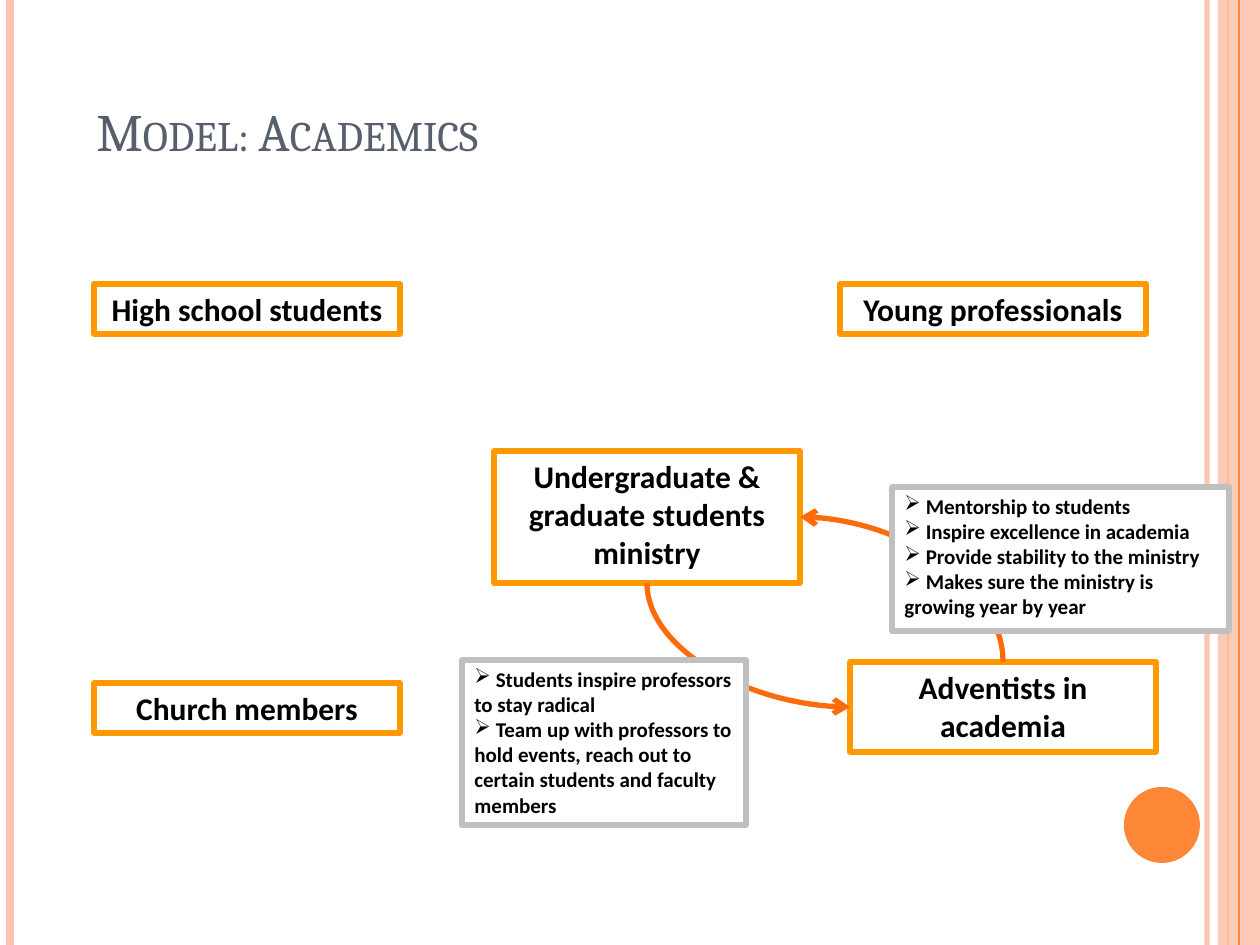
from pptx import Presentation
from pptx.dml.color import RGBColor
from pptx.enum.shapes import MSO_CONNECTOR, MSO_SHAPE
from pptx.enum.text import MSO_ANCHOR, MSO_AUTO_SIZE, PP_ALIGN
from pptx.oxml.ns import qn
from pptx.oxml.xmlchemy import OxmlElement
from pptx.util import Emu, Pt

PX_PER_INCH = 126
WIDTH, HEIGHT = 1260, 945
WHITE = RGBColor(0xFF, 0xFF, 0xFF)
BLACK = RGBColor(0x00, 0x00, 0x00)
SLATE = RGBColor(0x57, 0x5F, 0x6D)
PEACH = RGBColor(0xFE, 0xC3, 0xAE)
ORANGE = RGBColor(0xFE, 0x86, 0x37)
AMBER = RGBColor(0xFF, 0x99, 0x00)
ARROW = RGBColor(0xFF, 0x6B, 0x0A)
SILVER = RGBColor(0xC0, 0xC0, 0xC0)


def px(length):
    return Emu(round(length * 914400 / PX_PER_INCH))


def add_child(parent, tag, **attributes):
    child = OxmlElement(tag)
    for key, value in attributes.items():
        child.set(key, str(value))
    parent.append(child)


def set_opacity(properties, percent):
    """Make the solid colour inside a shape's or a line's XML translucent."""
    colour = properties.find(qn("a:solidFill")).find(qn("a:srgbClr"))
    add_child(colour, "a:alpha", val=percent * 1000)


class Slide:
    HEADING_FONT, BODY_FONT = "Cambria", "Calibri"

    def __init__(self, slide):
        self.shapes = slide.shapes

    def text_run(self, paragraph, text, size, font, colour, bold=False):
        run = paragraph.add_run()
        run.text = text
        run.font.size = Pt(size)
        run.font.name = font
        run.font.color.rgb = colour
        run.font.bold = bold
        return run

    def title(self, box, text):
        frame = self.shapes.add_textbox(*map(px, box)).text_frame
        frame.word_wrap = True
        frame.vertical_anchor = MSO_ANCHOR.BOTTOM
        run = self.text_run(frame.paragraphs[0], text, 30, self.HEADING_FONT, SLATE)
        run.font._element.set("cap", "small")

    def shape(self, kind, box, fill=None, line=None, opacity=100):
        shape = self.shapes.add_shape(kind, *map(px, box))
        shape.shadow.inherit = False
        if fill is None:
            shape.fill.background()
        else:
            shape.fill.solid()
            shape.fill.fore_color.rgb = fill
            if opacity < 100:
                set_opacity(shape._element.spPr, opacity)
        if line is None:
            shape.line.fill.background()
        else:
            shape.line.color.rgb = line
            shape.line.width = Pt(3)
        return shape

    def text_box(self, box, texts, size, line, fill=None, opacity=100, bullet=None):
        frame = self.shape(MSO_SHAPE.RECTANGLE, box, fill, line, opacity).text_frame
        frame.word_wrap = True
        frame.auto_size = MSO_AUTO_SIZE.SHAPE_TO_FIT_TEXT
        frame.vertical_anchor = MSO_ANCHOR.TOP
        for index, text in enumerate(texts):
            paragraph = frame.add_paragraph() if index else frame.paragraphs[0]
            paragraph.alignment = PP_ALIGN.LEFT if bullet else PP_ALIGN.CENTER
            if bullet:
                add_child(paragraph._p.get_or_add_pPr(), "a:buChar", char=bullet)
            self.text_run(paragraph, text, size, self.BODY_FONT, BLACK, bold=True)

    def group(self, box, text, fill=None, opacity=100):
        self.text_box(box, [text], 18, AMBER, fill, opacity)

    def note(self, box, texts):
        self.text_box(box, texts, 12, SILVER, WHITE, bullet="➢")

    def connector(self, kind, start, end, colour, width):
        connector = self.shapes.add_connector(kind, *map(px, start + end))
        connector.line.color.rgb = colour
        connector.line.width = Pt(width)
        add_child(connector._element.spPr, "a:effectLst")
        return connector

    def stripe(self, x, colour, width, opacity=100):
        stripe = self.connector(MSO_CONNECTOR.STRAIGHT, (x, 0), (x, HEIGHT), colour, width)
        if opacity < 100:
            set_opacity(stripe.line._get_or_add_ln(), opacity)

    def curved_arrow(self, start, end):
        """Quarter curve that leaves vertically and arrives horizontally."""
        curve = self.connector(MSO_CONNECTOR.CURVE, start, end, ARROW, 3)
        add_child(curve.line._get_or_add_ln(), "a:tailEnd", type="arrow")
        properties = curve._element.spPr
        properties.find(qn("a:prstGeom")).set("prst", "curvedConnector2")
        # The preset leaves horizontally, so its frame is turned by 270 degrees.
        dx, dy = end[0] - start[0], end[1] - start[1]
        curve.width, curve.height = px(abs(dy)), px(abs(dx))
        curve.left = px((start[0] + end[0] - abs(dy)) / 2)
        curve.top = px((start[1] + end[1] - abs(dx)) / 2)
        frame = properties.find(qn("a:xfrm"))
        frame.set("rot", str(270 * 60000))
        frame.set("flipH", str(int(dy > 0)))
        frame.set("flipV", str(int(dx < 0)))


def main():
    presentation = Presentation()
    presentation.slide_width, presentation.slide_height = px(WIDTH), px(HEIGHT)
    slide = Slide(presentation.slides.add_slide(presentation.slide_layouts[6]))

    slide.stripe(1207, PEACH, 3, opacity=93)
    slide.stripe(10, PEACH, 4.5)
    slide.stripe(1228, ORANGE, 1.5)
    slide.shape(MSO_SHAPE.RECTANGLE, (1218, 0, 42, HEIGHT), PEACH, opacity=87)
    slide.stripe(1239, ORANGE, 0.75)
    slide.shape(MSO_SHAPE.OVAL, (1124, 787, 76, 76), ORANGE)
    slide.title((84, 32, 1124, 136), "Model: Academics")

    group_width, group_height = 306, 50
    ministry = (494, 451, group_width, 132)
    academia = (850, 662, group_width, 90)
    slide.group(ministry, "Undergraduate & graduate students ministry", WHITE, opacity=80)
    slide.group(academia, "Adventists in academia")
    for left, top, name in (
        (94, 284, "High school students"),
        (840, 284, "Young professionals"),
        (94, 683, "Church members"),
    ):
        slide.group((left, top, group_width, group_height), name)

    def middle(box):
        left, top, width, height = box
        return left + width // 2, top + height // 2

    ministry_x, ministry_y = middle(ministry)
    academia_x, academia_y = middle(academia)
    slide.curved_arrow((academia_x, academia[1]), (ministry[0] + group_width, ministry_y))
    slide.curved_arrow((ministry_x, ministry[1] + ministry[3]), (academia[0], academia_y))

    slide.note((892, 487, 337, 144), [
        " Mentorship to students",
        " Inspire excellence in academia",
        " Provide stability to the ministry",
        " Makes sure the ministry is growing year by year",
    ])
    slide.note((462, 660, 284, 165), [
        " Students inspire professors to stay radical",
        " Team up with professors to hold events, reach out to certain students and faculty members",
    ])
    presentation.save("out.pptx")


if __name__ == "__main__":
    main()
